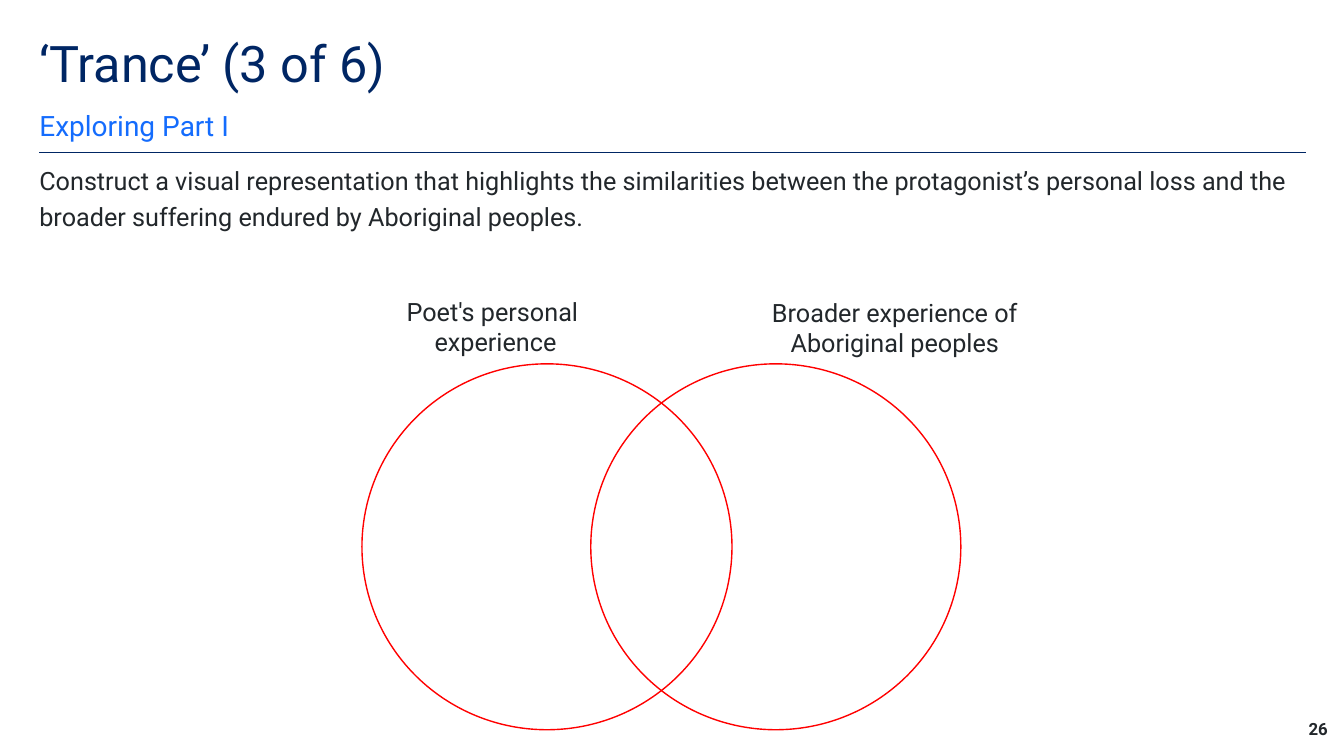
from pptx import Presentation
from pptx.dml.color import RGBColor
from pptx.enum.shapes import MSO_CONNECTOR as Conn, MSO_SHAPE as Geo
from pptx.enum.text import MSO_ANCHOR as Anchor, PP_ALIGN as Align
from pptx.oxml.ns import qn
from pptx.util import Inches, Pt
from lxml.etree import SubElement

WIDE, HIGH = 13.33, 7.5
EDGE = 0.39
NAVY, BLUE, INK, RED = "002664", "146CFD", "22272B", "FF0000"


def paint(code):
    return RGBColor.from_string(code)


def put(item, values):
    for name, value in values.items():
        setattr(item, name, value)


def add_text(slide, spot, lines, size, color=INK, bold=False,
             anchor=Anchor.TOP, **format):
    frame = slide.shapes.add_textbox(*map(Inches, spot)).text_frame
    put(frame, dict(word_wrap=True, vertical_anchor=anchor, margin_left=0,
                    margin_right=0, margin_top=0, margin_bottom=0))
    frame.text = "\n".join(lines)
    for para in frame.paragraphs:
        put(para, format)
        for run in para.runs:
            put(run.font, dict(name="Roboto", size=Pt(size), bold=bold))
            run.font.color.rgb = paint(color)


def add_rule(slide, left, right, top):
    rule = slide.shapes.add_connector(
        Conn.STRAIGHT, *map(Inches, (left, top, right, top)))
    rule.line.color.rgb = paint(NAVY)
    rule.line.width = Pt(0.5)
    SubElement(rule._element.spPr, qn("a:effectLst"))


def add_ring(slide, spot):
    ring = slide.shapes.add_shape(Geo.OVAL, *map(Inches, spot))
    ring.shadow.inherit = False
    ring.fill.background()
    ring.line.color.rgb = paint(RED)
    ring.line.width = Pt(1)


def main():
    deck = Presentation()
    put(deck, dict(slide_width=Inches(WIDE), slide_height=Inches(HIGH)))
    slide = deck.slides.add_slide(deck.slide_layouts[6])

    # Heading
    add_rule(slide, EDGE, 12.95, 1.51)
    add_text(slide, (EDGE, EDGE, 11.02, 0.6), ["‘Trance’ (3 of 6)"], 36, NAVY,
             line_spacing=0.9)
    add_text(slide, (EDGE, 1.07, 11.02, 0.34), ["Exploring Part I"], 20, BLUE,
             anchor=Anchor.BOTTOM, line_spacing=1.5, space_after=Pt(12))

    # Task
    add_text(slide, (EDGE, 1.58, 12.82, 0.78),
             ["Construct a visual representation that highlights the "
              "similarities between the protagonist’s personal loss and the "
              "broader suffering endured by Aboriginal peoples."],
             18, line_spacing=1.2, space_after=Pt(12))

    # Venn diagram
    labels = [((3.97, 2.94, 1.89, 0.61), ["Poet's personal ", "experience"]),
              ((7.48, 2.95, 2.79, 0.61),
               ["Broader experience of Aboriginal peoples"])]
    for col, (spot, lines) in enumerate(labels):
        add_text(slide, spot, lines, 18, alignment=Align.CENTER)
        add_ring(slide, (3.59 + 2.27 * col, 3.61, 3.67, 3.63))

    # Page number
    add_text(slide, (12.38, 7.13, 0.79, 0.37), ["26"], 12, bold=True,
             alignment=Align.RIGHT)
    deck.save("out.pptx")


if __name__ == "__main__":
    main()
